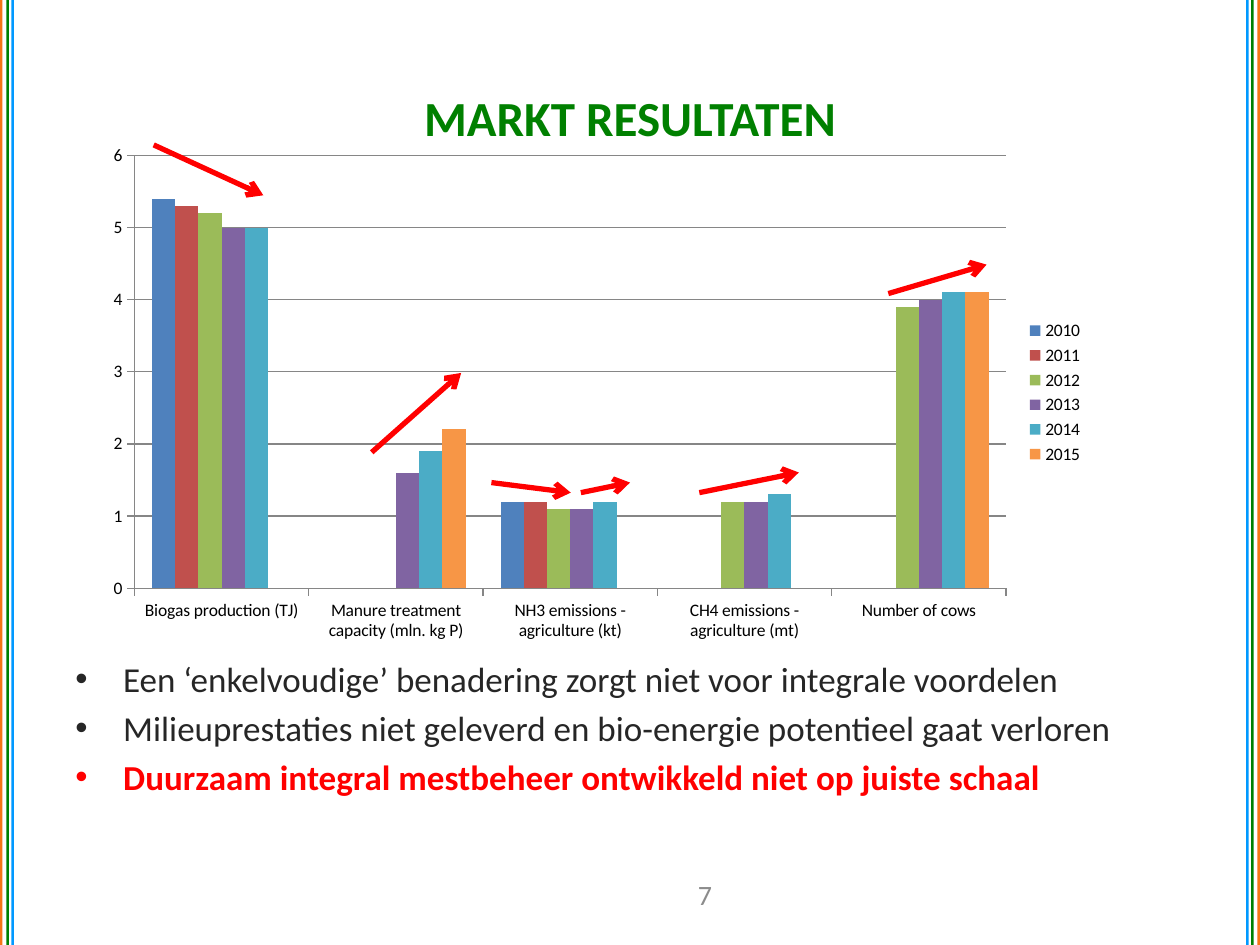
from lxml.etree import SubElement
from pptx import Presentation
from pptx.chart.data import CategoryChartData
from pptx.dml.color import RGBColor
from pptx.enum.chart import XL_CHART_TYPE, XL_LEGEND_POSITION, XL_TICK_MARK
from pptx.enum.shapes import MSO_CONNECTOR, MSO_SHAPE
from pptx.enum.text import MSO_ANCHOR, PP_ALIGN
from pptx.oxml.ns import qn
from pptx.util import Inches, Pt

COLORS = {
    "orange": "F67616", "green": "008000", "blue": "0099FF", "red": "FF0000",
    "text": "262626", "number": "8C8C8C", "black": "000000", "grid": "868686",
}
CATEGORIES = [
    "Biogas production (TJ)", "Manure treatment capacity (mln. kg P)",
    "NH3 emissions - agriculture (kt)", "CH4 emissions - agriculture (mt)",
    "Number of cows",
]
SERIES = [
    ("2010", "4F81BD", (5.4, None, 1.2, None, None)),
    ("2011", "C0504D", (5.3, None, 1.2, None, None)),
    ("2012", "9BBB59", (5.2, None, 1.1, 1.2, 3.9)),
    ("2013", "8064A2", (5, 1.6, 1.1, 1.2, 4)),
    ("2014", "4BACC6", (5, 1.9, 1.2, 1.3, 4.1)),
    ("2015", "F79646", (None, 2.2, None, None, 4.1)),
]
PLOT_AREA = {"x": 0.04, "y": 0.04, "w": 0.87, "h": 0.84}
TREND_ARROWS = [
    ((1.22, 1.15), (2.09, 1.55)),
    ((2.95, 3.59), (3.66, 2.96)),
    ((5.55, 3.91), (6.34, 3.75)),
    ((7.05, 2.33), (7.83, 2.1)),
    ((3.9, 3.83), (4.53, 3.91)),
    ((4.61, 3.91), (5, 3.83)),
]
BULLETS = [
    ("Een ‘enkelvoudige’ benadering zorgt niet voor integrale voordelen", "text", False),
    ("Milieuprestaties niet geleverd en bio-energie potentieel gaat verloren", "text", False),
    ("Duurzaam integral mestbeheer ontwikkeld niet op juiste schaal", "red", True),
]
STRIPES = [("orange", 0), ("green", 0.05), ("blue", 0.09)]
SLIDE_WIDTH, SLIDE_HEIGHT, STRIPE_WIDTH = 10, 7.5, 0.02


def rgb(value):
    return RGBColor.from_string(COLORS.get(value, value))


class SlideBuilder:
    font_name = "Calibri"

    def __init__(self, slide):
        self.slide = slide

    def set_font(self, font, size, color, bold=False):
        font.name = self.font_name
        font.size = Pt(size)
        font.bold = bold
        font.color.rgb = rgb(color)

    def place(self, shape, *box):
        shape.left, shape.top, shape.width, shape.height = map(Inches, box)

    def stripe(self, left, color):
        shape = self.slide.shapes.add_shape(
            MSO_SHAPE.RECTANGLE, Inches(left), 0, Inches(STRIPE_WIDTH), Inches(SLIDE_HEIGHT))
        shape.shadow.inherit = False
        shape.fill.solid()
        shape.fill.fore_color.rgb = rgb(color)
        shape.line.fill.background()

    def centred_text(self, shape, text, size, color, bold=False):
        frame = shape.text_frame
        frame.word_wrap = True
        frame.vertical_anchor = MSO_ANCHOR.MIDDLE
        paragraph = frame.paragraphs[0]
        paragraph.text = text
        paragraph.alignment = PP_ALIGN.CENTER
        self.set_font(paragraph.font, size, color, bold)

    def title(self, text, box):
        shape = self.slide.shapes.title
        self.place(shape, *box)
        self.centred_text(shape, text, 28, "green", True)

    def page_number(self, text, box):
        shape = self.slide.shapes.add_textbox(*map(Inches, box))
        self.centred_text(shape, text, 16, "number")

    def bullets(self, items, box):
        frame = self.slide.shapes.add_textbox(*map(Inches, box)).text_frame
        frame.word_wrap = True
        for index, (text, color, bold) in enumerate(items):
            paragraph = frame.add_paragraph() if index else frame.paragraphs[0]
            paragraph.text = text
            paragraph.space_before = Pt(4 if index else 0)
            properties = paragraph._p.get_or_add_pPr()
            properties.set("marL", str(Inches(0.38)))
            properties.set("indent", str(-Inches(0.38)))
            SubElement(properties, qn("a:buFont"), typeface="Arial")
            SubElement(properties, qn("a:buChar"), char="•")
            self.set_font(paragraph.font, 20, color, bold)

    def arrow(self, start, end):
        connector = self.slide.shapes.add_connector(
            MSO_CONNECTOR.STRAIGHT, *map(Inches, start + end))
        connector.line.color.rgb = rgb("red")
        connector.line.width = Pt(3)
        SubElement(connector.line._get_or_add_ln(), qn("a:tailEnd"), type="arrow")
        SubElement(connector._element.spPr, qn("a:effectLst"))

    def column_chart(self, box):
        data = CategoryChartData()
        data.categories = CATEGORIES
        for name, _, values in SERIES:
            data.add_series(name, values)
        chart = self.slide.shapes.add_chart(
            XL_CHART_TYPE.COLUMN_CLUSTERED, *map(Inches, box), data).chart
        self.set_font(chart.font, 10, "black")
        chart.has_title = False
        chart.has_legend = True
        chart.legend.position = XL_LEGEND_POSITION.RIGHT
        chart.legend.include_in_layout = False
        plot = chart.plots[0]
        plot.gap_width = 150
        plot.overlap = 0
        plot.vary_by_categories = False
        for series, (_, color, _) in zip(plot.series, SERIES):
            series.format.fill.solid()
            series.format.fill.fore_color.rgb = rgb(color)
        value_axis = chart.value_axis
        value_axis.minimum_scale, value_axis.maximum_scale = 0, 6
        value_axis.major_unit = 1
        value_axis.has_major_gridlines = True
        for axis in (chart.category_axis, value_axis):
            axis.major_tick_mark = XL_TICK_MARK.OUTSIDE
        for part in (chart.category_axis, value_axis, value_axis.major_gridlines):
            part.format.line.color.rgb = rgb("grid")
            part.format.line.width = Pt(0.75)
        self.fix_plot_area(chart)

    def fix_plot_area(self, chart):
        plot_area = chart._chartSpace.chart.plotArea
        for layout in plot_area.findall(qn("c:layout")):
            plot_area.remove(layout)
        layout = SubElement(plot_area, qn("c:layout"))
        plot_area.insert(0, layout)
        manual = SubElement(layout, qn("c:manualLayout"))
        SubElement(manual, qn("c:layoutTarget"), val="inner")
        for side in ("x", "y"):
            SubElement(manual, qn(f"c:{side}Mode"), val="edge")
        for side, share in PLOT_AREA.items():
            SubElement(manual, qn(f"c:{side}"), val=str(share))


def main():
    presentation = Presentation()
    presentation.slide_width = Inches(SLIDE_WIDTH)
    presentation.slide_height = Inches(SLIDE_HEIGHT)
    builder = SlideBuilder(presentation.slides.add_slide(presentation.slide_layouts[5]))
    for color, offset in STRIPES:
        builder.stripe(offset, color)
        builder.stripe(SLIDE_WIDTH - STRIPE_WIDTH - offset, color)
    builder.title("MARKT RESULTATEN", (0.5, 0.3, 9, 1.25))
    builder.page_number("7", (5.16, 6.9, 0.87, 0.4))
    builder.column_chart((0.75, 1.07, 7.95, 4.09))
    for start, end in TREND_ARROWS:
        builder.arrow(start, end)
    builder.bullets(BULLETS, (0.5, 5.17, 9.3, 1.34))
    presentation.save("out.pptx")


if __name__ == "__main__":
    main()
